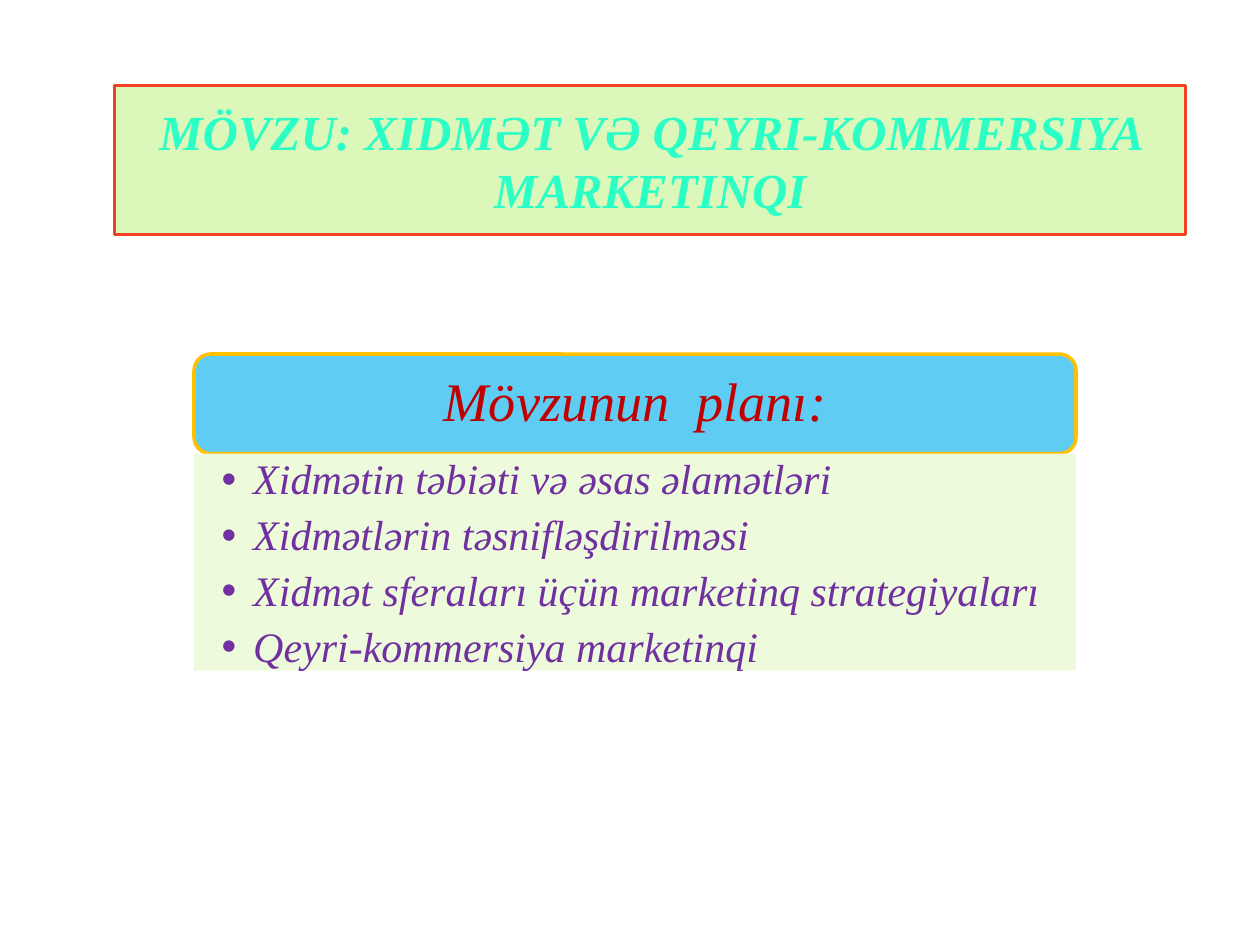
from lxml.etree import SubElement
from pptx import Presentation
from pptx.dml.color import RGBColor
from pptx.enum.shapes import MSO_SHAPE
from pptx.enum.text import MSO_ANCHOR, MSO_AUTO_SIZE, PP_ALIGN
from pptx.oxml.ns import qn
from pptx.util import Inches, Pt

COLUMNS, ROWS = 100, 75
FONT = "Times New Roman"
COLOURS = {
    "title_fill": "DCF7BA",
    "title_line": "F14124",
    "title_text": "2CFFC5",
    "header_fill": "5ECCF3",
    "header_line": "FFC000",
    "header_text": "C00000",
    "plan_fill": "EDFBDC",
    "plan_text": "7030A0",
}
TITLE = "MÖVZU: XIDMƏT VƏ QEYRI-KOMMERSIYA MARKETINQI"
HEADER = "Mövzunun  planı:"
TOPICS = [
    "Xidmətin təbiəti və əsas əlamətləri",
    "Xidmətlərin təsnifləşdirilməsi",
    "Xidmət sferaları üçün marketinq strategiyaları",
    "Qeyri-kommersiya marketinqi",
]
PLAN_LEFT, PLAN_WIDTH = 15.4, 70
HEADER_TOP, HEADER_HEIGHT, LIST_HEIGHT = 28.1, 7.9, 17.2


def colour(name):
    return RGBColor.from_string(COLOURS[name])


def grid_area(deck, left, top, width, height):
    column, row = deck.slide_width / COLUMNS, deck.slide_height / ROWS
    return [round(n) for n in (left * column, top * row, width * column, height * row)]


def paint(box, fill, line=None):
    box.fill.solid()
    box.fill.fore_color.rgb = colour(fill)
    if line:
        box.line.color.rgb = colour(line)
        box.line.width = Pt(2)
    else:
        box.line.fill.background()


def set_frame(box, anchor, left=0.1, top=0.05, right=0.1, bottom=0.05):
    frame = box.text_frame
    frame.word_wrap = True
    frame.auto_size = MSO_AUTO_SIZE.NONE
    frame.vertical_anchor = anchor
    frame.margin_left, frame.margin_top = Inches(left), Inches(top)
    frame.margin_right, frame.margin_bottom = Inches(right), Inches(bottom)
    return frame


def write(para, text, size, ink, align, bold=False):
    para.alignment = align
    span = para.add_run()
    span.text = text
    span.font.name = FONT
    span.font.size = Pt(size)
    span.font.bold = bold
    span.font.italic = True
    span.font.color.rgb = colour(ink)


def add_bullet(para):
    properties = para._p.get_or_add_pPr()
    properties.set("marL", str(Inches(0.25)))
    properties.set("indent", str(-Inches(0.25)))
    SubElement(properties, qn("a:buFont"), typeface="Arial")
    SubElement(properties, qn("a:buChar"), char="•")


def add_panel(deck, page, kind, area, fill, line=None):
    box = page.shapes.add_shape(kind, *grid_area(deck, *area))
    box.shadow.inherit = False
    paint(box, fill, line)
    return box


def add_title(deck, page):
    box = page.shapes.title
    box.left, box.top, box.width, box.height = grid_area(deck, 9.1, 6.8, 85, 11.8)
    paint(box, "title_fill", "title_line")
    frame = set_frame(box, MSO_ANCHOR.MIDDLE)
    write(frame.paragraphs[0], TITLE, 28, "title_text", PP_ALIGN.CENTER, bold=True)


def add_header(deck, page):
    area = PLAN_LEFT, HEADER_TOP, PLAN_WIDTH, HEADER_HEIGHT
    box = add_panel(deck, page, MSO_SHAPE.ROUNDED_RECTANGLE, area,
                    "header_fill", "header_line")
    para = set_frame(box, MSO_ANCHOR.MIDDLE).paragraphs[0]
    para.line_spacing = 0.9
    write(para, HEADER, 31, "header_text", PP_ALIGN.CENTER)


def add_topics(deck, page):
    area = PLAN_LEFT, HEADER_TOP + HEADER_HEIGHT, PLAN_WIDTH, LIST_HEIGHT
    box = add_panel(deck, page, MSO_SHAPE.RECTANGLE, area, "plan_fill")
    frame = set_frame(box, MSO_ANCHOR.TOP, 0.22, 0.04, 0.24, 0.04)
    for index, topic in enumerate(TOPICS):
        para = frame.add_paragraph() if index else frame.paragraphs[0]
        para.line_spacing = 0.9
        para.space_after = Pt(6)
        write(para, topic, 24, "plan_text", PP_ALIGN.LEFT)
        add_bullet(para)


def main():
    deck = Presentation()
    deck.slide_width, deck.slide_height = Inches(10), Inches(7.5)
    page = deck.slides.add_slide(deck.slide_layouts[5])
    add_title(deck, page)
    add_header(deck, page)
    add_topics(deck, page)
    deck.save("out.pptx")


if __name__ == "__main__":
    main()
